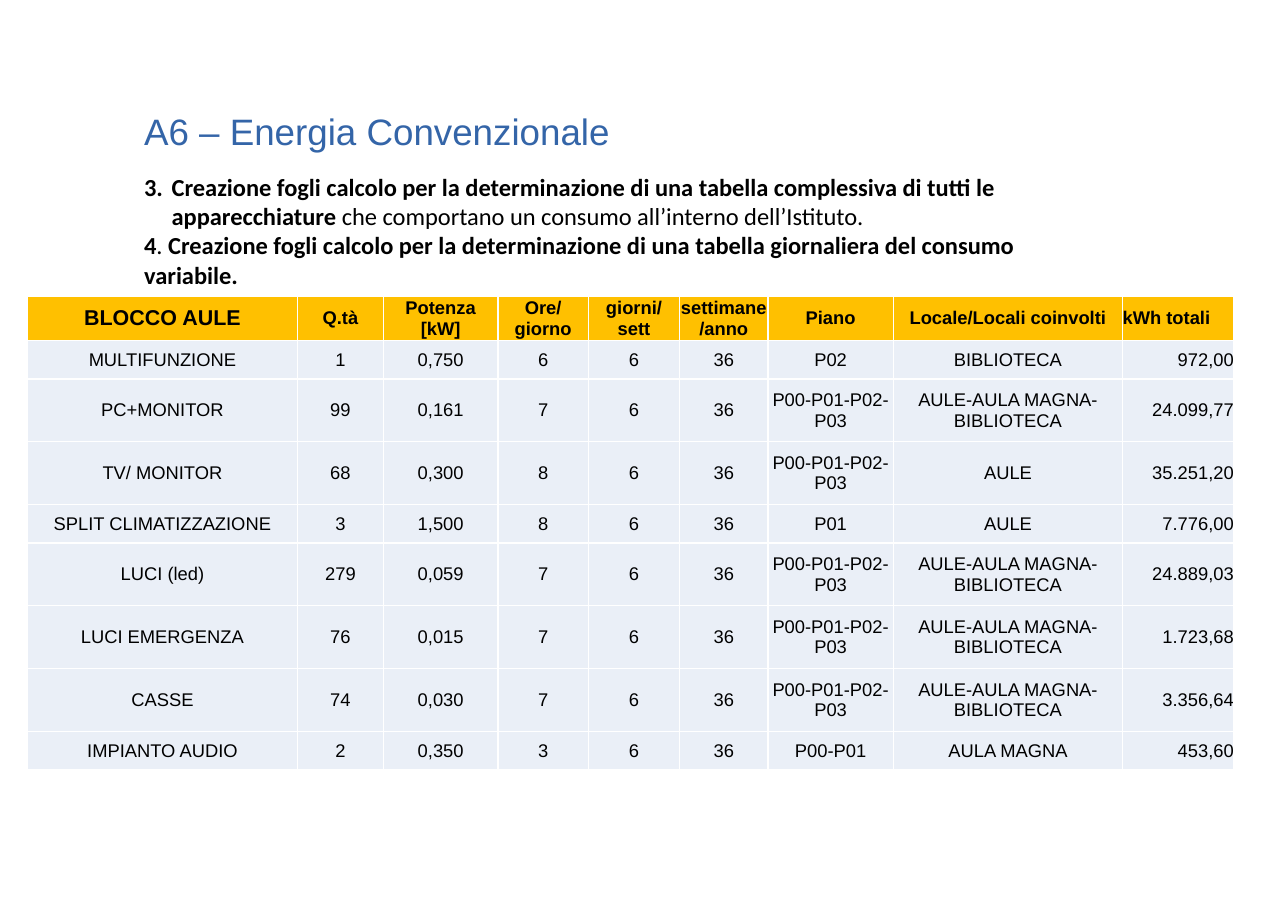
from pptx import Presentation
from pptx.dml.color import RGBColor
from pptx.enum.text import MSO_ANCHOR, MSO_AUTO_SIZE, PP_ALIGN
from pptx.oxml import parse_xml
from pptx.oxml.ns import nsdecls
from pptx.util import Pt

PX = 9144
THEME = {
    "title": RGBColor(0x34, 0x65, 0xA8),
    "text": RGBColor(0, 0, 0),
    "header_fill": RGBColor(0xFF, 0xC0, 0x00),
    "body_fill": RGBColor(0xEA, 0xEF, 0xF7),
    "border": "FFFFFF",
    "border_width": Pt(1),
    "heading_font": "Arial",
    "list_font": "Calibri",
    "title_size": Pt(24),
    "list_size": Pt(16),
    "block_size": Pt(14),
    "cell_size": Pt(12),
}


def style_font(font, name, size, color, bold=False):
    font.name = name
    font.size = size
    font.bold = bold
    font.color.rgb = color


def add_text_box(slide, left, top, width, height):
    shape = slide.shapes.add_textbox(left * PX, top * PX, width * PX, height * PX)
    shape.text_frame.word_wrap = True
    return shape.text_frame


presentation = Presentation()
presentation.slide_width = 1169 * PX
presentation.slide_height = 827 * PX
slide = presentation.slides.add_slide(presentation.slide_layouts[6])

title_frame = add_text_box(slide, 121, 98, 955, 66)
title_frame.text = "A6 – Energia Convenzionale"
title = title_frame.paragraphs[0]
title.line_spacing = 0.9
style_font(title.runs[0].font, THEME["heading_font"], THEME["title_size"], THEME["title"])

activities = [
    [
        ("Creazione fogli calcolo per la determinazione di una tabella complessiva di tutti le apparecchiature ", True),
        ("che comportano un consumo all’interno dell’Istituto.", False),
    ],
    [
        ("4", True),
        (". ", False),
        ("Creazione fogli calcolo per la determinazione di una tabella giornaliera del consumo variabile.", True),
    ],
]
list_frame = add_text_box(slide, 121, 151, 877, 118)
list_frame.auto_size = MSO_AUTO_SIZE.SHAPE_TO_FIT_TEXT
numbered = list_frame.paragraphs[0]
properties = numbered._p.get_or_add_pPr()
properties.set("marL", str(25 * PX))
properties.set("indent", str(-25 * PX))
properties.append(parse_xml(f'<a:buAutoNum {nsdecls("a")} type="arabicPeriod" startAt="3"/>'))
for paragraph, pieces in zip([numbered, list_frame.add_paragraph()], activities):
    for text, bold in pieces:
        run = paragraph.add_run()
        run.text = text
        style_font(run.font, THEME["list_font"], THEME["list_size"], THEME["text"], bold)

DAYS, WEEKS = "6", "36"
ALL_FLOORS = "P00-P01-P02-P03"
ALL_ROOMS = "AULE-AULA MAGNA-BIBLIOTECA"
headers = ["BLOCCO AULE", "Q.tà", "Potenza\n[kW]", "Ore/\ngiorno", "giorni/\nsett",
           "settimane/anno", "Piano", "Locale/Locali coinvolti", "kWh totali"]
devices = [
    ("MULTIFUNZIONE", "1", "0,750", "6", "P02", "BIBLIOTECA", "972,00"),
    ("PC+MONITOR", "99", "0,161", "7", ALL_FLOORS, ALL_ROOMS, "24.099,77"),
    ("TV/ MONITOR", "68", "0,300", "8", ALL_FLOORS, "AULE", "35.251,20"),
    ("SPLIT CLIMATIZZAZIONE", "3", "1,500", "8", "P01", "AULE", "7.776,00"),
    ("LUCI (led)", "279", "0,059", "7", ALL_FLOORS, ALL_ROOMS, "24.889,03"),
    ("LUCI EMERGENZA", "76", "0,015", "7", ALL_FLOORS, ALL_ROOMS, "1.723,68"),
    ("CASSE", "74", "0,030", "7", ALL_FLOORS, ALL_ROOMS, "3.356,64"),
    ("IMPIANTO AUDIO", "2", "0,350", "3", "P00-P01", "AULA MAGNA", "453,60"),
]
rows = [headers] + [[*device[:4], DAYS, WEEKS, *device[4:]] for device in devices]
column_widths = [245, 78, 104, 82, 83, 80, 114, 208, 101]
row_heights = [36] + [57 if ALL_FLOORS in device else 35 for device in devices]

table = slide.shapes.add_table(
    len(rows), len(headers), 25 * PX, 269 * PX, sum(column_widths) * PX, sum(row_heights) * PX
).table
table.first_row = False
table.horz_banding = False
for column, width in zip(table.columns, column_widths):
    column.width = width * PX
for row, height in zip(table.rows, row_heights):
    row.height = height * PX

for row_index, values in enumerate(rows):
    is_header = row_index == 0
    for column_index, value in enumerate(values):
        cell = table.cell(row_index, column_index)
        cell.text = value
        cell.vertical_anchor = MSO_ANCHOR.MIDDLE
        cell.margin_left = cell.margin_right = cell.margin_top = cell.margin_bottom = 0
        cell.fill.solid()
        cell.fill.fore_color.rgb = THEME["header_fill" if is_header else "body_fill"]
        alignment = PP_ALIGN.CENTER
        if column_index == len(headers) - 1:
            alignment = PP_ALIGN.LEFT if is_header else PP_ALIGN.RIGHT
        size = THEME["block_size" if is_header and column_index == 0 else "cell_size"]
        for paragraph in cell.text_frame.paragraphs:
            paragraph.alignment = alignment
            style_font(paragraph.runs[0].font, THEME["heading_font"], size, THEME["text"], is_header)
        for position, side in enumerate(("lnL", "lnR", "lnT", "lnB")):
            border = parse_xml(
                f'<a:{side} {nsdecls("a")} w="{THEME["border_width"]}"><a:solidFill>'
                f'<a:srgbClr val="{THEME["border"]}"/></a:solidFill></a:{side}>'
            )
            cell._tc.get_or_add_tcPr().insert(position, border)

presentation.save("out.pptx")
